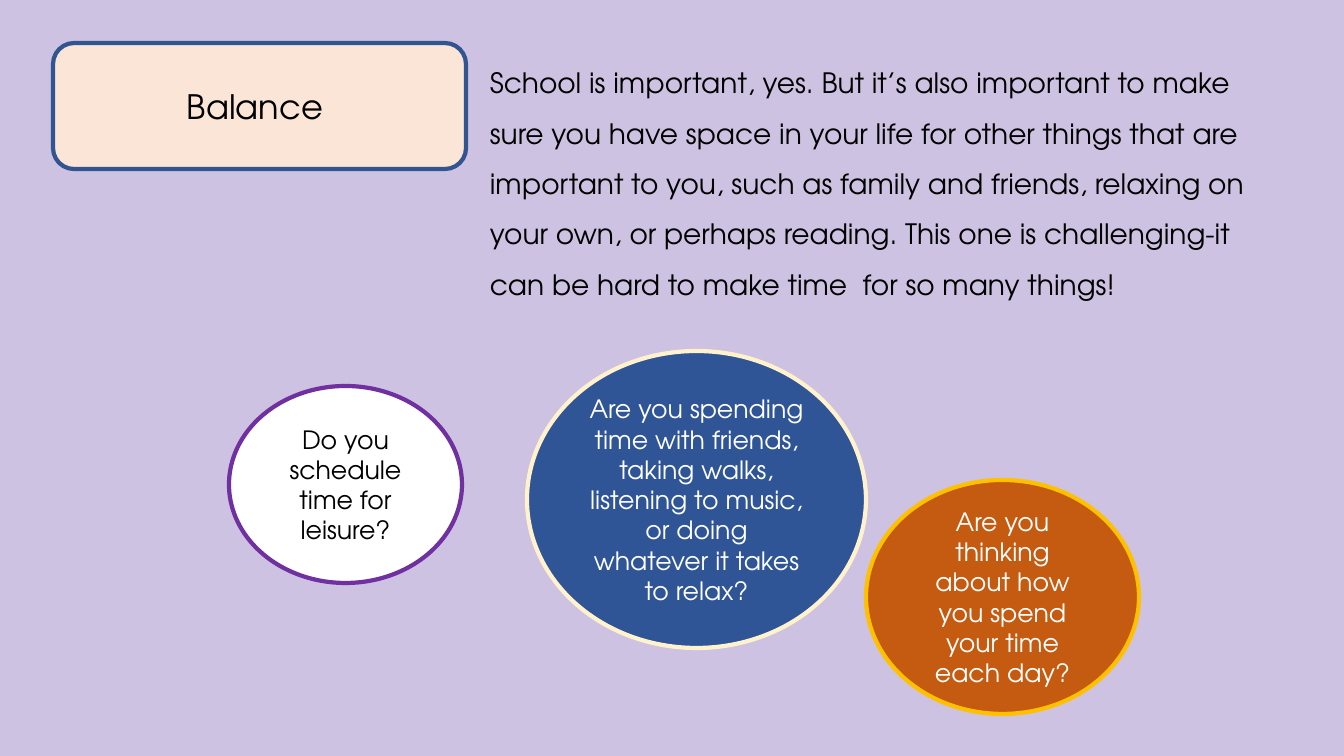
from pptx import Presentation
from pptx.dml.color import RGBColor
from pptx.enum.shapes import MSO_SHAPE
from pptx.enum.text import MSO_ANCHOR, MSO_AUTO_SIZE, PP_ALIGN
from pptx.util import Emu, Pt

OVAL = MSO_SHAPE.OVAL
ROUNDED = MSO_SHAPE.ROUNDED_RECTANGLE
MIDDLE = MSO_ANCHOR.MIDDLE
GROW = MSO_AUTO_SIZE.SHAPE_TO_FIT_TEXT
LEFT, CENTER = PP_ALIGN.LEFT, PP_ALIGN.CENTER

SLIDE_WIDTH, SLIDE_HEIGHT = 1344, 756
EMU_PER_PX = 12192000 / SLIDE_WIDTH

QUESTIONS = [
    ((527, 351, 339, 297), "2F5597", "FFF2CC", "FFFFFF",
     ["Are you spending time with friends, taking walks, listening to music, "
      "or doing whatever it takes to relax?"]),
    ((866, 480, 273, 234), "C55A11", "FFC000", "FFFFFF",
     ["Are you thinking about how", "you spend your time each day?"]),
    ((229, 386, 233, 197), "FFFFFF", "7030A0", "000000",
     ["Do you schedule time for leisure?"]),
]
ADVICE = (
    "School is important, yes. But it’s also important to make sure you have "
    "space in your life for other things that are important to you, such as "
    "family and friends, relaxing on your own, or perhaps reading. This one is "
    "challenging-it can be hard to make time  for so many things!"
)


def px(length):
    """Turn a length in px into EMU."""
    return Emu(round(length * EMU_PER_PX))


def color(value):
    """Turn a hex string into a colour."""
    return RGBColor.from_string(value)


def write(frame, lines, font="TeX Gyre Adventor", size=18, ink="000000",
          align=LEFT, spacing=None):
    """Fill a text frame with one paragraph per line."""
    frame.word_wrap = True
    for index, line in enumerate(lines):
        para = frame.add_paragraph() if index else frame.paragraphs[0]
        para.alignment = align
        if spacing:
            para.line_spacing = spacing
        span = para.add_run()
        span.text = line
        span.font.name = font
        span.font.size = Pt(size)
        span.font.color.rgb = color(ink)


class Page:
    """Hold the style and the current slide."""

    def __init__(self, deck, background, outline=3):
        """Add a blank slide with a plain background."""
        self.slide = deck.slides.add_slide(deck.slide_layouts[6])
        self.outline = Pt(outline)
        fill = self.slide.background.fill
        fill.solid()
        fill.fore_color.rgb = color(background)

    def shape(self, kind, place, fill, line, lines, **style):
        """Draw an outlined shape with centred text."""
        shape = self.slide.shapes.add_shape(kind, *map(px, place))
        shape.shadow.inherit = False
        shape.fill.solid()
        shape.fill.fore_color.rgb = color(fill)
        shape.line.color.rgb = color(line)
        shape.line.width = self.outline
        shape.text_frame.vertical_anchor = MIDDLE
        write(shape.text_frame, lines, align=CENTER, **style)

    def text(self, place, lines, **style):
        """Place a text box that grows with its text."""
        box = self.slide.shapes.add_textbox(*map(px, place))
        write(box.text_frame, lines, **style)
        box.text_frame.auto_size = GROW


def main():
    """Build the slide and save it."""
    deck = Presentation()
    deck.slide_width, deck.slide_height = px(SLIDE_WIDTH), px(SLIDE_HEIGHT)
    page = Page(deck, "CEC2E2")
    for place, fill, line, ink, lines in QUESTIONS:
        page.shape(OVAL, place, fill, line, lines, ink=ink)
    page.shape(ROUNDED, (53, 43, 413, 126), "FBE5D6", "325491", ["Balance "], size=24)
    page.text((480, 44, 798, 258), [ADVICE], size=20, spacing=1.5)
    deck.save("out.pptx")


if __name__ == "__main__":
    main()
